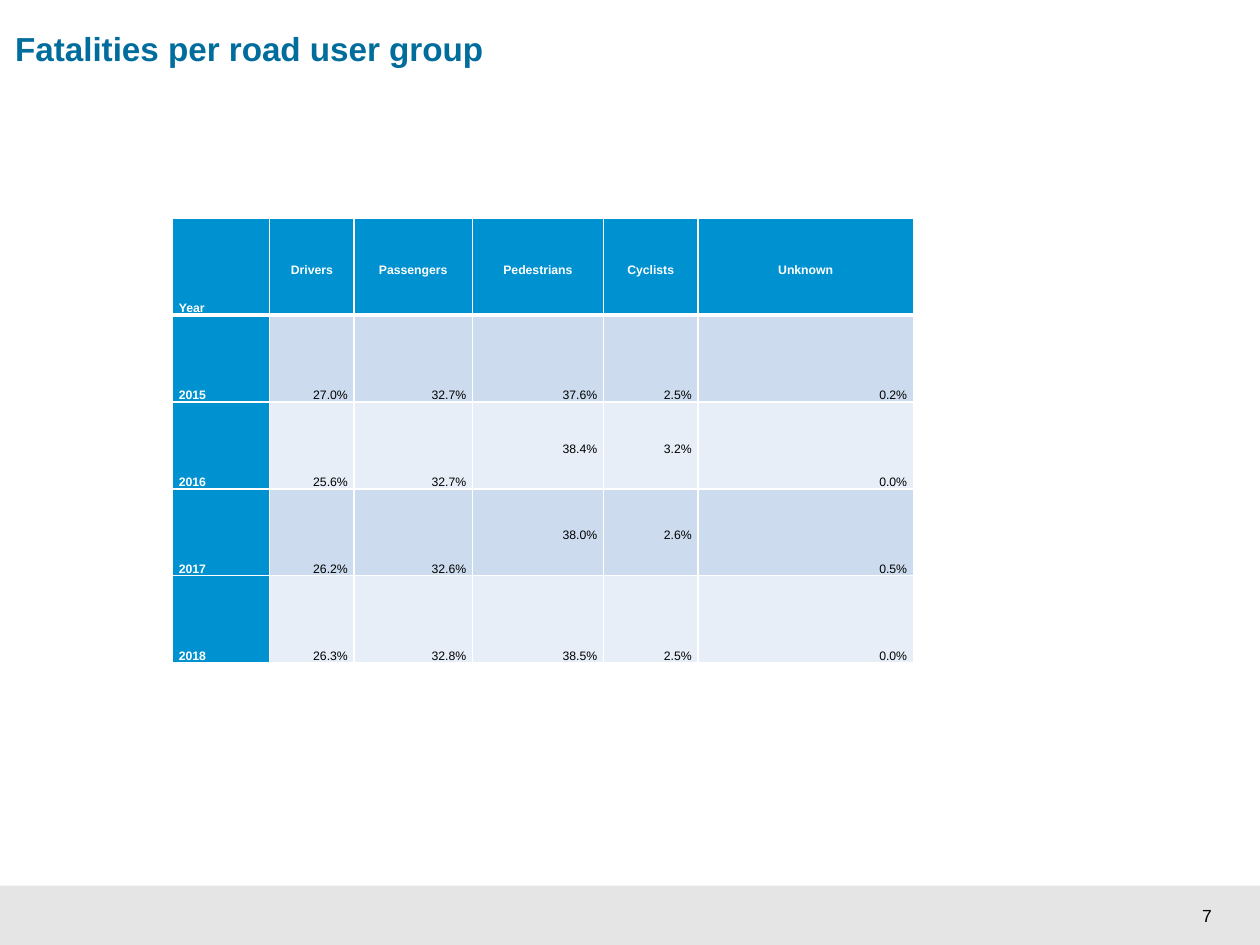
"""Build the slide with the table of fatalities per road user group."""
from lxml.etree import SubElement
from pptx import Presentation
from pptx.dml.color import RGBColor
from pptx.enum.shapes import MSO_SHAPE
from pptx.enum.text import MSO_ANCHOR as ANCHOR, PP_ALIGN as ALIGN
from pptx.oxml.ns import qn
from pptx.util import Inches, Pt

TITLE = "Fatalities per road user group"
PAGE = "7"
ROWS = [
    ("Year", "Drivers", "Passengers", "Pedestrians", "Cyclists", "Unknown"),
    ("2015", "27.0%", "32.7%", "37.6%", "2.5%", "0.2%"),
    ("2016", "25.6%", "32.7%", "38.4%", "3.2%", "0.0%"),
    ("2017", "26.2%", "32.6%", "38.0%", "2.6%", "0.5%"),
    ("2018", "26.3%", "32.8%", "38.5%", "2.5%", "0.0%"),
]
COL_WIDTHS = [0.77, 0.67, 0.94, 1.04, 0.75, 1.71]
ROW_HEIGHTS = [0.77] + [0.69] * 4
RAISED = {(r, c) for r in (2, 3) for c in (3, 4)}
BLUE, BANDS = "0091D0", ("E7EEF7", "CCDCEE")
WHITE, BLACK, GREY, TITLE_BLUE = "FFFFFF", "000000", "E5E5E5", "006D9C"


def rgb(color):
    return RGBColor.from_string(color)


def write(tf, text, size, color, bold=False, **paragraph):
    p = tf.paragraphs[0]
    for name, value in paragraph.items():
        setattr(p, name, value)
    r = p.add_run()
    r.text = text
    for name, value in dict(name="Arial", size=Pt(size), bold=bold).items():
        setattr(r.font, name, value)
    r.font.color.rgb = rgb(color)


def add_text(s, box, text, size, color, bold=False, **frame):
    tf = s.shapes.add_textbox(*map(Inches, box)).text_frame
    margins = dict.fromkeys(("margin_left", "margin_top", "margin_right", "margin_bottom"), 0)
    for name, value in {**margins, **frame}.items():
        setattr(tf, name, value)
    write(tf, text, size, color, bold)


def add_borders(cell, row):
    widths = dict(lnL=1, lnR=1, lnT=3 if row == 1 else 1, lnB=3 if row == 0 else 1)
    for tag, width in widths.items():
        ln = SubElement(cell._tc.get_or_add_tcPr(), qn(f"a:{tag}"), w=str(Pt(width)))
        SubElement(SubElement(ln, qn("a:solidFill")), qn("a:srgbClr"), val=WHITE)


def style_cell(cell, row, col, text):
    head = row == 0 or col == 0
    middle = (row == 0 and col > 0) or (row, col) in RAISED
    align = ALIGN.LEFT if col == 0 else ALIGN.CENTER if row == 0 else ALIGN.RIGHT
    add_borders(cell, row)
    cell.fill.solid()
    cell.fill.fore_color.rgb = rgb(BLUE if head else BANDS[row % 2])
    fmt = dict(margin_left=Inches(0.05), margin_right=Inches(0.05), margin_top=0, margin_bottom=0,
               vertical_anchor=ANCHOR.MIDDLE if middle else ANCHOR.BOTTOM)
    for name, value in fmt.items():
        setattr(cell, name, value)
    write(cell.text_frame, text, 7, WHITE if head else BLACK, head, alignment=align, line_spacing=1.5)


def add_data_table(s):
    box = (1.37, 1.73, sum(COL_WIDTHS), sum(ROW_HEIGHTS))
    table = s.shapes.add_table(len(ROWS), len(COL_WIDTHS), *map(Inches, box)).table
    for column, width in zip(table.columns, COL_WIDTHS):
        column.width = Inches(width)
    for row, height in zip(table.rows, ROW_HEIGHTS):
        row.height = Inches(height)
    for r, values in enumerate(ROWS):
        for c, text in enumerate(values):
            style_cell(table.cell(r, c), r, c, text)


def main():
    prs = Presentation()
    prs.slide_width, prs.slide_height = Inches(10), Inches(7.5)
    s = prs.slides.add_slide(prs.slide_layouts[6])
    footer = s.shapes.add_shape(MSO_SHAPE.RECTANGLE, *map(Inches, (0, 7.03, 10, 0.47)))
    footer.shadow.inherit = False
    footer.fill.solid()
    footer.fill.fore_color.rgb = rgb(GREY)
    footer.line.fill.background()
    add_text(s, (9.54, 7.18, 0.23, 0.17), PAGE, 10, BLACK, word_wrap=False)
    add_data_table(s)
    add_text(s, (0.12, 0.22, 8.21, 0.32), TITLE, 19, TITLE_BLUE, True,
             word_wrap=True, vertical_anchor=ANCHOR.MIDDLE)
    prs.save("out.pptx")


if __name__ == "__main__":
    main()
